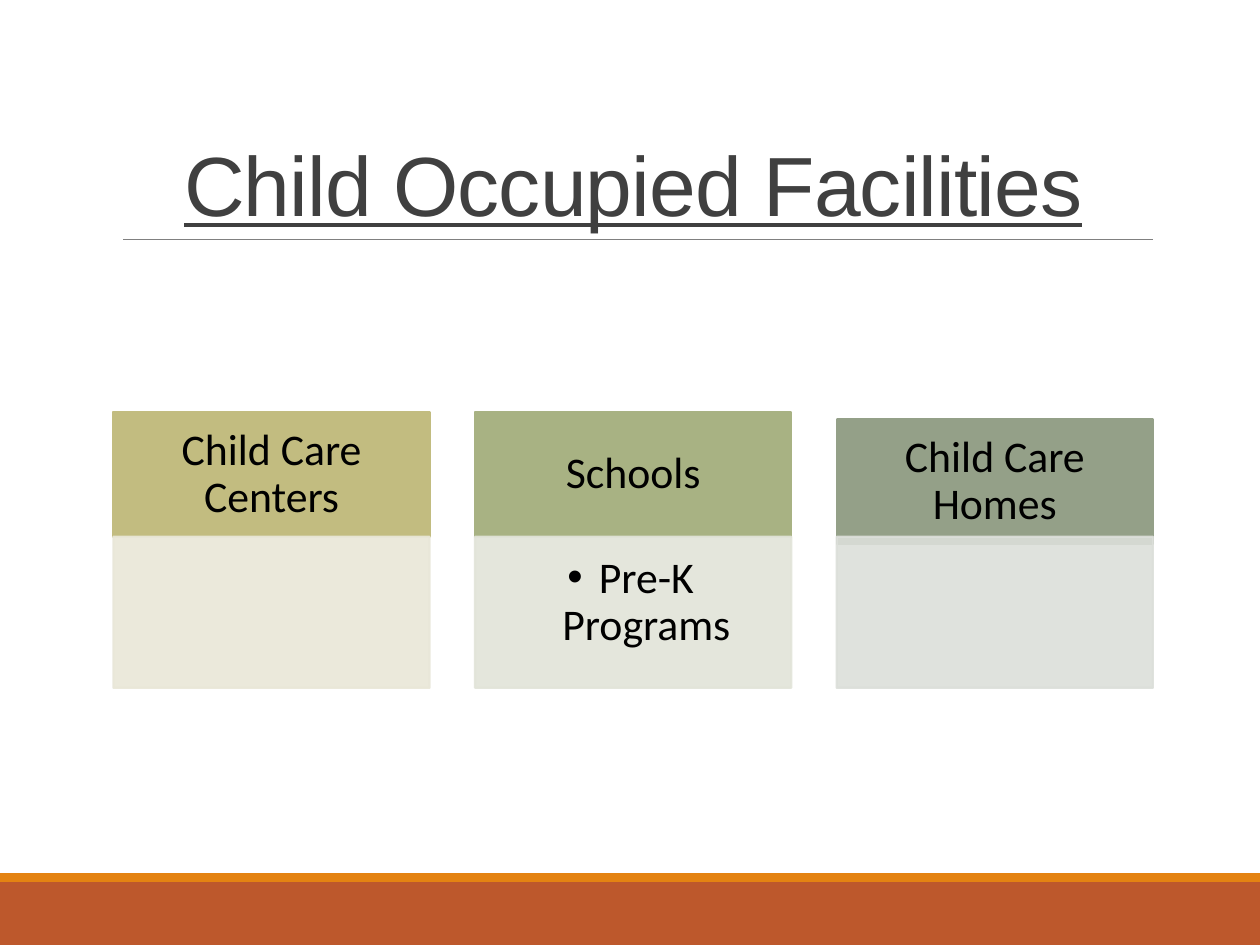
from dataclasses import dataclass

from lxml.etree import SubElement
from pptx import Presentation
from pptx.dml.color import RGBColor
from pptx.enum.shapes import MSO_CONNECTOR, MSO_SHAPE
from pptx.enum.text import MSO_ANCHOR, PP_ALIGN
from pptx.oxml.ns import qn
from pptx.util import Inches, Pt


@dataclass(frozen=True)
class Theme:
    title_font: str = "Arial"
    body_font: str = "Calibri"
    title_size: float = 48
    body_size: float = 25
    title_color: str = "404040"
    body_color: str = "000000"
    rule: str = "808080"
    footer: str = "BD582C"
    footer_edge: str = "E48312"
    panel_opacity: int = 90


THEME = Theme()

# heading, bullet, heading colour, panel colour, heading drop in inches
FACILITIES = [
    ("Child Care Centers", "", "C2BC80", "E9E7D8", 0),
    ("Schools", "Pre-K Programs", "A8B283", "E2E4D9", 0),
    ("Child Care Homes", "", "94A088", "DCDFDA", 0.06),
]


def add_block(slide, box, color, outlined=False, opacity=100):
    """Add a plain rectangle; box is left, top, width, height in inches."""
    block = slide.shapes.add_shape(MSO_SHAPE.RECTANGLE, *map(Inches, box))
    block.shadow.inherit = False
    block.fill.solid()
    block.fill.fore_color.rgb = RGBColor.from_string(color)
    if outlined:
        block.line.color.rgb = RGBColor.from_string(color)
        block.line.width = Pt(1.25)
    else:
        block.line.fill.background()
    if opacity < 100:
        for tint in block._element.spPr.iter(qn("a:srgbClr")):
            SubElement(tint, qn("a:alpha"), val=str(opacity * 1000))
    return block


def write_text(holder, text, insets, anchor, line_spacing, font_format, color):
    frame = holder.text_frame
    frame.word_wrap = True
    frame.vertical_anchor = anchor
    for side, inset in zip(("left", "top", "right", "bottom"), insets):
        setattr(frame, f"margin_{side}", Inches(inset))
    paragraph = frame.paragraphs[0]
    paragraph.alignment = PP_ALIGN.CENTER
    paragraph.line_spacing = line_spacing
    run = paragraph.add_run()
    run.text = text
    for name, value in font_format.items():
        setattr(run.font, name, value)
    run.font.color.rgb = RGBColor.from_string(color)
    return paragraph


def add_bullet(paragraph, indent):
    properties = paragraph._p.get_or_add_pPr()
    properties.set("marL", str(Inches(indent)))
    properties.set("indent", str(-Inches(indent)))
    SubElement(properties, qn("a:buFont"), typeface="Arial")
    SubElement(properties, qn("a:buChar"), char="•")


def add_footer(slide, box):
    left, top, width, height = box
    edge_height = 0.07
    add_block(slide, (left, top + edge_height, width, height - edge_height), THEME.footer)
    add_block(slide, (left, top, width, edge_height), THEME.footer_edge)


def add_title(slide, box):
    """Add the underlined title and the thin rule along the box's lower edge."""
    left, top, width, height = box
    bottom = top + height
    rule = slide.shapes.add_connector(
        MSO_CONNECTOR.STRAIGHT,
        *map(Inches, (left + 0.08, bottom, left + width, bottom)),
    )
    rule.line.color.rgb = RGBColor.from_string(THEME.rule)
    rule.line.width = Pt(0.5)
    SubElement(rule._element.spPr, qn("a:effectLst"))

    title = slide.shapes.add_textbox(*map(Inches, box))
    title_format = {"name": THEME.title_font, "size": Pt(THEME.title_size), "underline": True}
    paragraph = write_text(
        title, "Child Occupied Facilities", (0.1, 0.05, 0.1, 0.05),
        MSO_ANCHOR.BOTTOM, 0.85, title_format, THEME.title_color,
    )
    paragraph.runs[0].font._element.set("spc", "-50")


def add_facility(slide, box, facility):
    """Add one column: a heading block above a translucent panel."""
    heading, bullet, heading_color, panel_color, drop = facility
    left, top, width, height = box
    heading_height = 0.99
    body_format = {"name": THEME.body_font, "size": Pt(THEME.body_size)}

    header = add_block(
        slide, (left, top + drop, width, heading_height), heading_color, outlined=True
    )
    write_text(header, heading, (0.19, 0.11, 0.19, 0.11),
               MSO_ANCHOR.MIDDLE, 0.9, body_format, THEME.body_color)

    panel = add_block(
        slide, (left, top + heading_height, width, height - heading_height),
        panel_color, outlined=True, opacity=THEME.panel_opacity,
    )
    if bullet:
        paragraph = write_text(panel, bullet, (0.15, 0.15, 0.19, 0.22),
                               MSO_ANCHOR.TOP, 0.9, body_format, THEME.body_color)
        paragraph.level = 1
        add_bullet(paragraph, 0.25)


def add_facilities(slide, box):
    left, top, width, height = box
    column_width = 2.51
    step = (width - column_width) / (len(FACILITIES) - 1)
    for column, facility in enumerate(FACILITIES):
        add_facility(slide, (left + column * step, top, column_width, height), facility)


def main():
    deck = Presentation()
    deck.slide_width, deck.slide_height = Inches(10), Inches(7.5)
    slide = deck.slides.add_slide(deck.slide_layouts[6])
    add_footer(slide, (0, 6.93, 10, 0.57))
    add_title(slide, (0.9, 0.31, 8.25, 1.59))
    add_facilities(slide, (0.9, 3.27, 8.25, 2.19))
    deck.save("out.pptx")


if __name__ == "__main__":
    main()
